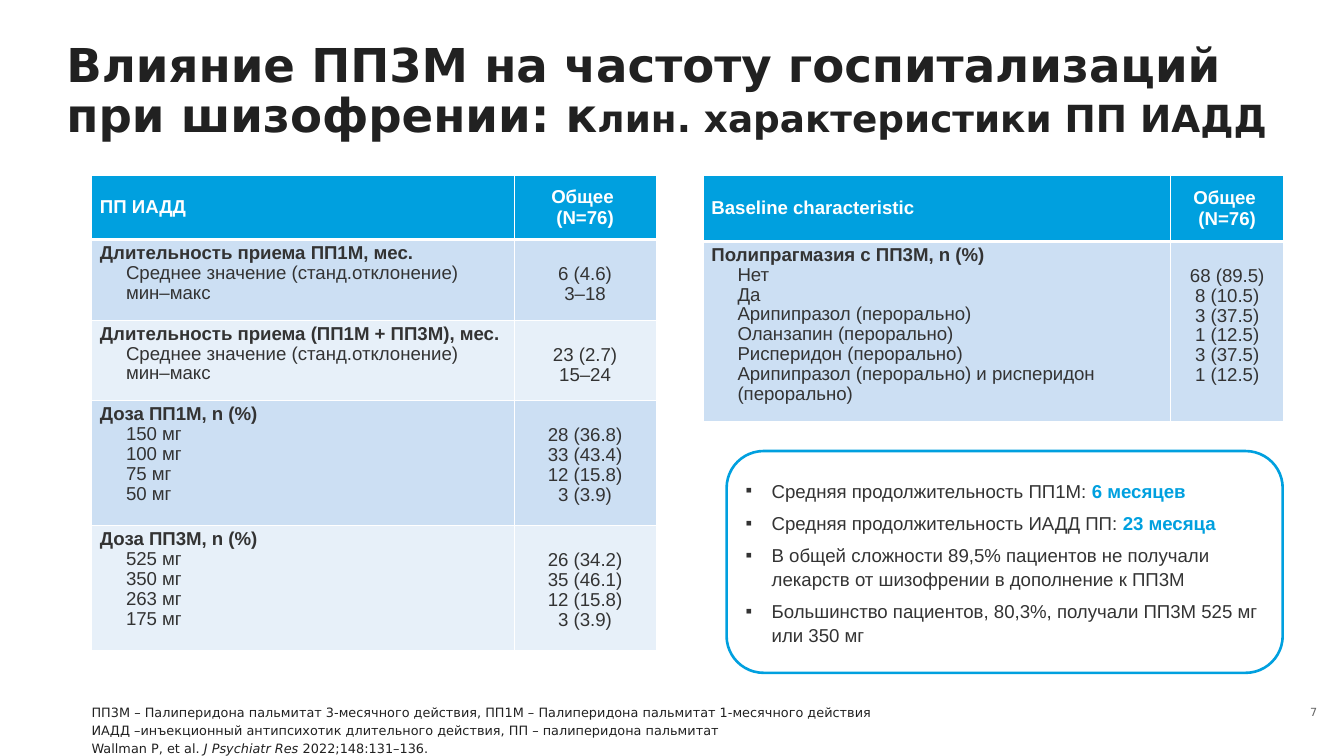
from lxml import etree
from pptx import Presentation
from pptx import util as u
from pptx.dml.color import RGBColor
from pptx.enum import shapes, text
from pptx.oxml.ns import qn

COLORS = {"blue": "00A0DF", "band": "CCDFF3", "light": "E7F0F9", "white": "FFFFFF",
          "ink": "212121", "body": "333333", "grey": "646464"}
SANS, HEADING = "Arial", "DejaVu Sans"
COLUMNS, ROWS = 160, 90  # layout grid of the slide
WIDTH, HEIGHT = u.Inches(16), u.Inches(9)
LINE = 0.96  # line spacing in table bodies
HEADER_LINES = ["Общее ", "(N=76)"]

COURSE_GROUPS = [
    ("Длительность приема ПП1М, мес.", 9.6,
     [("Среднее значение (станд.отклонение)", "6 (4.6)"), ("мин–макс", "3–18")]),
    ("Длительность приема (ПП1М + ПП3М), мес.", 9.6,
     [("Среднее значение (станд.отклонение)", "23 (2.7)"), ("мин–макс", "15–24")]),
    ("Доза ПП1М, n (%)", 14.9,
     [("150 мг", "28 (36.8)"), ("100 мг", "33 (43.4)"),
      ("75 мг", "12 (15.8)"), ("50 мг", "3 (3.9)")]),
    ("Доза ПП3М, n (%)", 14.9,
     [("525 мг", "26 (34.2)"), ("350 мг", "35 (46.1)"),
      ("263 мг", "12 (15.8)"), ("175 мг", "3 (3.9)")]),
]
POLYPHARMACY_GROUPS = [
    ("Полипрагмазия с ПП3М, n (%)", 20.7,
     [("Нет", "68 (89.5)"), ("Да", "8 (10.5)"), ("Арипипразол (перорально)", "3 (37.5)"),
      ("Оланзапин (перорально)", "1 (12.5)"), ("Рисперидон (перорально)", "3 (37.5)"),
      ("Арипипразол (перорально) и рисперидон (перорально)", "1 (12.5)")]),
]
FINDINGS = [
    ("Средняя продолжительность ПП1М: ", "6 месяцев"),
    ("Средняя продолжительность ИАДД ПП: ", "23 месяца"),
    ("В общей сложности 89,5% пациентов не получали лекарств от шизофрении "
     "в дополнение к ПП3М", ""),
    ("Большинство пациентов, 80,3%, получали ПП3М 525 мг или 350 мг", ""),
]
FOOTNOTES = [
    [("ПП3М – Палиперидона пальмитат 3-месячного действия, "
      "ПП1М – Палиперидона пальмитат 1-месячного действия", False)],
    [("ИАДД –инъекционный антипсихотик длительного действия, "
      "ПП – палиперидона пальмитат", False)],
    [("Wallman P, et al. ", False), ("J Psychiatr Res ", True), ("2022;148:131–136.", False)],
]


def across(columns):
    return round(WIDTH * columns / COLUMNS)


def down(rows):
    return round(HEIGHT * rows / ROWS)


def place(box):
    left, top, width, height = box
    return across(left), down(top), across(width), down(height)


def color(name):
    return RGBColor.from_string(COLORS[name])


def add_run(paragraph, words, size, font, tone, bold=False, italic=False):
    run = paragraph.add_run()
    run.text = words
    run.font.size, run.font.name = u.Pt(size), font
    run.font.bold, run.font.italic = bold, italic
    run.font.color.rgb = color(tone)


def next_paragraph(frame, index):
    return frame.add_paragraph() if index else frame.paragraphs[0]


def prepare_frame(frame, anchor, margin=None):
    frame.word_wrap = True
    frame.vertical_anchor = anchor
    if margin is not None:
        frame.margin_left = frame.margin_right = margin
        frame.margin_top = frame.margin_bottom = margin


def set_indent(paragraph, left, first=0.0):
    properties = paragraph._p.get_or_add_pPr()
    properties.set("marL", str(u.Inches(left)))
    properties.set("indent", str(u.Inches(first)))
    return properties


def style_cell(cell, fill, bottom=1):
    cell.fill.solid()
    cell.fill.fore_color.rgb = color(fill)
    properties = cell._tc.get_or_add_tcPr()
    for position, (side, width) in enumerate(
            [("lnL", 1), ("lnR", 1), ("lnT", 1), ("lnB", bottom)]):
        line = etree.Element(qn("a:" + side), w=str(u.Pt(width)))
        solid = etree.SubElement(line, qn("a:solidFill"))
        etree.SubElement(solid, qn("a:srgbClr"), val=COLORS["white"])
        properties.insert(position, line)


def fill_cell(cell, lines, tone="body", bold=False, centred=False, spacing=None):
    for index, words in enumerate(lines):
        paragraph = next_paragraph(cell.text_frame, index)
        paragraph.alignment = text.PP_ALIGN.CENTER if centred else text.PP_ALIGN.LEFT
        paragraph.line_spacing = spacing
        add_run(paragraph, words, 16, SANS, tone, bold)


def add_group_table(slide, box, heading, groups, widths, header_height):
    table = slide.shapes.add_table(len(groups) + 1, 2, *place(box)).table
    for column, width in zip(table.columns, widths):
        column.width = across(width)
    # Header row
    table.rows[0].height = down(header_height)
    for column, lines in enumerate([[heading], HEADER_LINES]):
        cell = table.cell(0, column)
        style_cell(cell, "blue", bottom=3)
        cell.vertical_anchor = text.MSO_ANCHOR.MIDDLE
        fill_cell(cell, lines, "white", True, column == 1)
    # One row for each group
    for row, (name, height, items) in enumerate(groups, 1):
        table.rows[row].height = down(height)
        labels, values = table.cell(row, 0), table.cell(row, 1)
        for cell in (labels, values):
            style_cell(cell, "band" if row % 2 else "light")
        fill_cell(labels, [name], bold=True, spacing=LINE)
        for label, _ in items:
            paragraph = labels.text_frame.add_paragraph()
            set_indent(paragraph, 0.31)
            paragraph.line_spacing = LINE
            add_run(paragraph, label, 16, SANS, "body")
        values.margin_top = u.Inches(0.3)  # values start beside the first label
        fill_cell(values, [value for _, value in items], centred=True, spacing=LINE)


def add_title(slide, box):
    title = slide.shapes.title
    title.left, title.top, title.width, title.height = place(box)
    prepare_frame(title.text_frame, text.MSO_ANCHOR.TOP, 0)
    title.text_frame.auto_size = text.MSO_AUTO_SIZE.NONE
    paragraph = title.text_frame.paragraphs[0]
    paragraph.alignment, paragraph.line_spacing = text.PP_ALIGN.LEFT, 0.9
    add_run(paragraph, "Влияние ПП3М на частоту госпитализаций при шизофрении: к",
            40, HEADING, "ink", True)
    add_run(paragraph, "лин. характеристики ПП ИАДД", 32, HEADING, "ink", True)


def add_findings(slide, box):
    shape = slide.shapes.add_shape(shapes.MSO_SHAPE.ROUNDED_RECTANGLE, *place(box))
    shape.shadow.inherit = False
    shape.fill.background()
    shape.line.color.rgb, shape.line.width = color("blue"), u.Pt(2.25)
    prepare_frame(shape.text_frame, text.MSO_ANCHOR.MIDDLE)
    for index, (words, result) in enumerate(FINDINGS):
        paragraph = next_paragraph(shape.text_frame, index)
        properties = set_indent(paragraph, 0.31, -0.31)
        etree.SubElement(properties, qn("a:buFont"), typeface=SANS)
        etree.SubElement(properties, qn("a:buChar"), char="▪")
        paragraph.alignment, paragraph.line_spacing = text.PP_ALIGN.LEFT, 1.07
        paragraph.space_before = u.Pt(7 if index else 0)
        add_run(paragraph, words, 16, SANS, "body")
        if result:
            add_run(paragraph, result, 16, SANS, "blue", True)


def add_footnotes(slide, box):
    frame = slide.shapes.add_textbox(*place(box)).text_frame
    prepare_frame(frame, text.MSO_ANCHOR.BOTTOM, 0)
    for index, runs in enumerate(FOOTNOTES):
        paragraph = next_paragraph(frame, index)
        paragraph.space_before = u.Pt(2 if index else 0)
        for words, italic in runs:
            add_run(paragraph, words, 11, HEADING, "ink", italic=italic)


def add_page_number(slide, box):
    frame = slide.shapes.add_textbox(*place(box)).text_frame
    prepare_frame(frame, text.MSO_ANCHOR.MIDDLE)
    frame.paragraphs[0].alignment = text.PP_ALIGN.RIGHT
    add_run(frame.paragraphs[0], "7", 9.6, HEADING, "grey")


def main():
    presentation = Presentation()
    presentation.slide_width, presentation.slide_height = WIDTH, HEIGHT
    slide = presentation.slides.add_slide(presentation.slide_layouts[5])
    add_title(slide, (7.9, 5, 146.2, 12.1))
    add_page_number(slide, (152.8, 82.6, 5, 4.4))
    add_group_table(slide, (10.9, 20.9, 67.2, 56.6), "ПП ИАДД",
                    COURSE_GROUPS, (50.3, 16.9), 7.6)
    add_group_table(slide, (83.7, 20.9, 69.1, 28.5), "Baseline characteristic",
                    POLYPHARMACY_GROUPS, (55.7, 13.4), 7.8)
    add_findings(slide, (86.5, 53.7, 66.2, 26.4))
    add_footnotes(slide, (10.9, 82.2, 114.9, 7.8))
    presentation.save("out.pptx")


if __name__ == "__main__":
    main()
